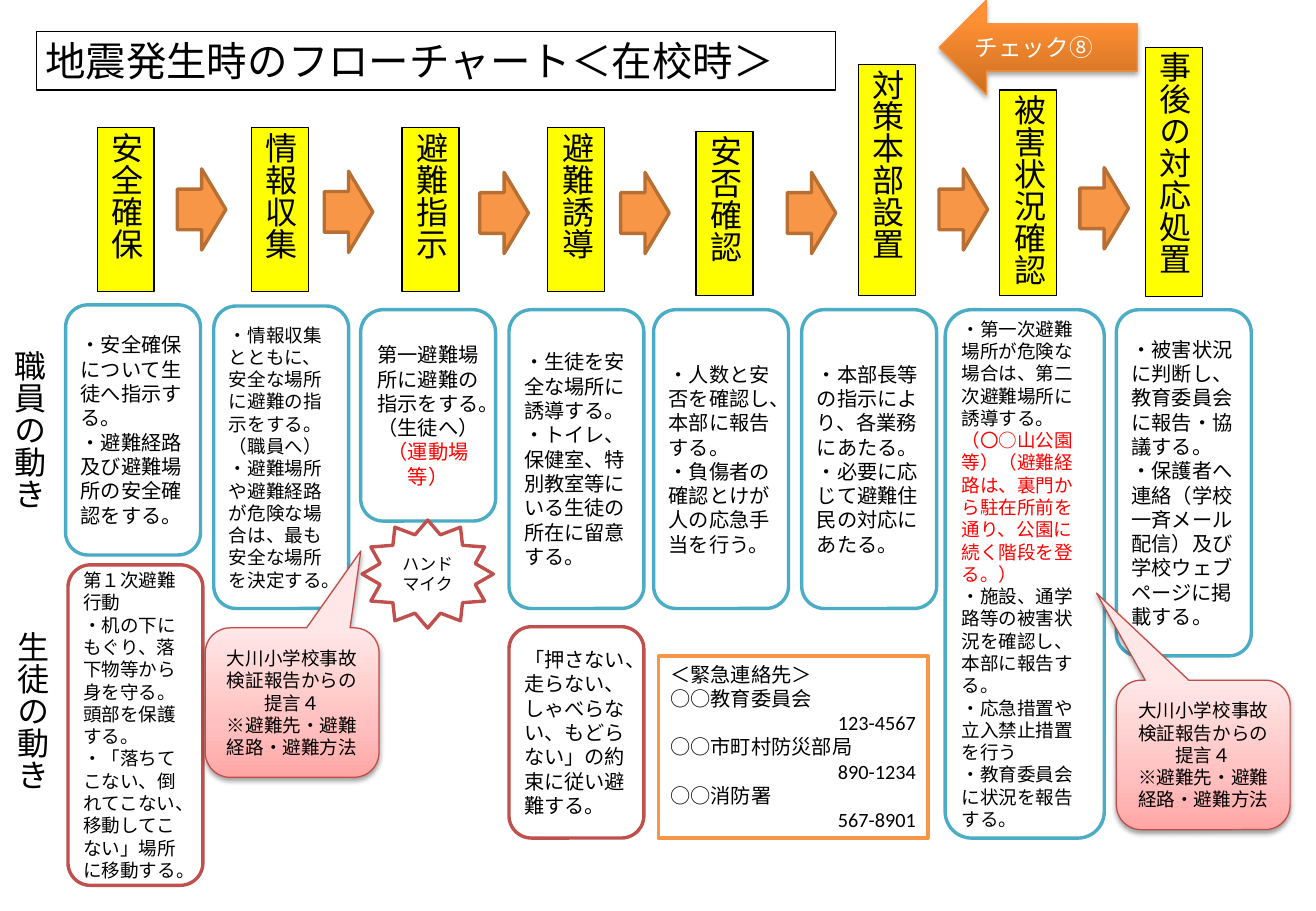
from lxml import etree
from pptx import Presentation
from pptx.dml.color import RGBColor
from pptx.enum import shapes, text
from pptx.oxml import ns
from pptx.util import Pt

HUES = {"black": "000000", "white": "FFFFFF", "red": "FF0000", "yellow": "FFFF00",
        "teal": "4BACC6", "brick": "C0504D", "orange": "F79646", "brown": "B76F34",
        "rose": "BF4C48", "amber": "F69240"}
PINK = [(0, "FFA6A5"), (35, "FFC0BF"), (100, "FFE7E7")]
FLAME = [(0, "CC6E20"), (80, "FF9034"), (100, "FF9136")]
KIND, SIDE, EDGE = shapes.MSO_SHAPE, text.PP_ALIGN, text.MSO_ANCHOR

deck = Presentation()
deck.slide_width, deck.slide_height = Pt(780), Pt(540)
slide = deck.slides.add_slide(deck.slide_layouts[5])


def put(kind, box, lines=(), size=12, fill="white", line="teal", width=2, ink="black",
        align=SIDE.LEFT, anchor=EDGE.MIDDLE, pad=(5.1, 2.6), tall=False):
    """Place a shape, a text box or the title; text after | is red."""
    box = [Pt(v) for v in box]
    if kind == "title":
        part = slide.shapes.title
        part.left, part.top, part.width, part.height = box
    elif kind == "text":
        part = slide.shapes.add_textbox(*box)
    else:
        part = slide.shapes.add_shape(kind, *box)
        part.shadow.inherit = False
    if fill:
        part.fill.solid()
        part.fill.fore_color.rgb = RGBColor.from_string(HUES[fill])
    if line:
        part.line.color.rgb = RGBColor.from_string(HUES[line])
        part.line.width = Pt(width)
    frame = part.text_frame
    form = {"word_wrap": True, "auto_size": text.MSO_AUTO_SIZE.NONE,
            "vertical_anchor": anchor, "margin_left": Pt(pad[0]), "margin_right": Pt(pad[0]),
            "margin_top": Pt(pad[1]), "margin_bottom": Pt(pad[1])}
    for name, value in form.items():
        setattr(frame, name, value)
    if tall:
        part.element.txBody.bodyPr.set("vert", "eaVert")
    for i, words in enumerate(lines):
        para = frame.add_paragraph() if i else frame.paragraphs[0]
        para.alignment = align
        for piece, hue in zip(words.split("|"), (ink, "red")):
            if piece:
                run = para.add_run()
                run.text = piece
                run.font.name, run.font.size = "Calibri", Pt(size)
                run.font.color.rgb = RGBColor.from_string(HUES[hue])
    return part


def shade(part, stops, alpha, drop):
    """Add an upward gradient and a soft shadow below."""
    main = ns.nsdecls("a")
    marks = "".join(f'<a:gs pos="{at * 1000}"><a:srgbClr val="{hue}"/></a:gs>' for at, hue in stops)
    grad = etree.fromstring(f'<a:gradFill {main} rotWithShape="1"><a:gsLst>{marks}</a:gsLst>'
                            '<a:lin ang="16200000" scaled="0"/></a:gradFill>')
    glow = etree.fromstring(
        f'<a:outerShdw {main} blurRad="{Pt(3.1)}" dist="{Pt(drop)}" dir="5400000" rotWithShape="0">'
        f'<a:srgbClr val="000000"><a:alpha val="{alpha * 1000}"/></a:srgbClr></a:outerShdw>')
    props = part.element.spPr
    props.replace(props.find(ns.qn("a:solidFill")), grad)
    props.find(ns.qn("a:effectLst")).append(glow)


# Title
put("title", (21.6, 18.7, 473.8, 34.6), ["地震発生時のフローチャート＜在校時＞"], 24,
    fill=None, line="black", width=0.75, anchor=EDGE.TOP)

# Step labels
steps = [("安全確保", 57.6, 75.6, 97.2), ("情報収集", 149, 75.6, 97.2),
         ("避難指示", 238.3, 75.6, 97.2), ("避難誘導", 324.7, 75.6, 97.2),
         ("安否確認", 412.6, 77.8, 97.2), ("対策本部設置", 509, 38.2, 136.8),
         ("被害状況確認", 592.6, 53.3, 121.7), ("事後の対応処置", 679, 28, 147.6)]
for name, x, y, high in steps:
    put(KIND.RECTANGLE, (x, y, 33.8, high), [name], 19, "yellow", "black", 0.75,
        anchor=EDGE.TOP, tall=True)

# Arrows between steps
for x, y in [(105.1, 100.1), (192.2, 101.5), (284.4, 102.2), (367.9, 102.2),
             (466.6, 102.2), (556.6, 100.1), (640.1, 99.4)]:
    put(KIND.RIGHT_ARROW, (x, y, 28.8, 48.2), fill="orange", line="brown")

# Row names
for name, x, y in [("職員の動き", 0, 205.2), ("生徒の動き", 2.2, 371.5)]:
    put("text", (x, y, 33.8, 109.4), [name], 19, None, None, anchor=EDGE.TOP, tall=True)

# Staff (teal) and pupil (brick) cards
cards = [
    ((38.9, 180.7, 80, 148.3), 12, "teal",
     ["・安全確保について生徒へ指示する。", "・避難経路及び避難場所の安全確認をする。"]),
    ((40.3, 334.8, 80, 190), 11, "brick",
     ["第１次避難行動", "・机の下にもぐり、落下物等から身を守る。頭部を保護する。",
      "・「落ちてこない、倒れてこない、移動してこない」場所に移動する。"]),
    ((126.7, 181.4, 80, 179.3), 11, "teal",
     ["・情報収集とともに、安全な場所に避難の指示をする。（職員へ）",
      "・避難場所や避難経路が危険な場合は、最も安全な場所を決定する。"]),
    ((213.8, 183.6, 80, 125.3), 12, "teal",
     ["第一避難場所に避難の指示をする。（生徒へ）", "|（運動場等）"]),
    ((301.7, 183.6, 80, 177.1), 12, "teal",
     ["・生徒を安全な場所に誘導する。", "・トイレ、保健室、特別教室等にいる生徒の所在に留意する。"]),
    ((387.4, 183.6, 80, 177.1), 12, "teal",
     ["・人数と安否を確認し、本部に報告する。", "・負傷者の確認とけが人の応急手当を行う。"]),
    ((475.2, 183.6, 80, 177.1), 12, "teal",
     ["・本部長等の指示により、各業務にあたる。", "・必要に応じて避難住民の対応にあたる。"]),
    ((560.2, 183.6, 94.3, 313.2), 11, "teal",
     ["・第一次避難場所が危険な場合は、第二次避難場所に誘導する。|（〇○山公園等）"
      "（避難経路は、裏門から駐在所前を通り、公園に続く階段を登る。）",
      "・施設、通学路等の被害状況を確認し、本部に報告する。",
      "・応急措置や立入禁止措置を行う", "・教育委員会に状況を報告する。"]),
    ((661.7, 183.6, 80, 205.2), 12, "teal",
     ["・被害状況に判断し、教育委員会に報告・協議する。",
      "・保護者へ連絡（学校一斉メール配信）及び学校ウェブページに掲載する。"]),
    ((301.7, 371.5, 80, 125.3), 12, "brick",
     ["「押さない、走らない、しゃべらない、もどらない」の約束に従い避難する。"]),
]
for box, size, hue, lines in cards:
    mid = lines[-1].startswith("|")
    put(KIND.ROUNDED_RECTANGLE, box, lines, size, line=hue,
        align=SIDE.CENTER if mid else SIDE.LEFT)

# Megaphone star
put(KIND.STAR_12_POINT, (214.6, 308.2, 77.8, 64.1), ["ハンドマイク"], 10,
    line="brick", align=SIDE.CENTER)

# Emergency contacts
calls = put(KIND.RECTANGLE, (390.2, 388.8, 159.8, 108),
            ["＜緊急連絡先＞", "○○教育委員会", "123-4567", "○○市町村防災部局", "890-1234",
             "○○消防署", "567-8901"], line="orange", anchor=EDGE.TOP, pad=(7.2, 3.6))
for para in calls.text_frame.paragraphs[2::2]:
    para.alignment = SIDE.RIGHT

# Callouts
for x, y, tip in [(661.7, 403.2, (-0.614, -1.082)), (121.7, 372.2, (0.395, -1.014))]:
    note = put(KIND.ROUNDED_RECTANGULAR_CALLOUT, (x, y, 103, 88.6),
               ["大川小学校事故検証報告からの提言４", "※避難先・避難経路・避難方法"], 11,
               line="rose", width=0.75, align=SIDE.CENTER, pad=(7.2, 3.6))
    note.adjustments[0], note.adjustments[1] = tip
    shade(note, PINK, 38, 1.6)

# Check arrow
check = put(KIND.LEFT_ARROW, (556.6, 0, 117.4, 56.2), ["チェック⑧"], 14, line="amber",
            width=0.75, ink="white", align=SIDE.JUSTIFY, pad=(7.2, 3.6))
shade(check, FLAME, 35, 1.8)

deck.save("out.pptx")
